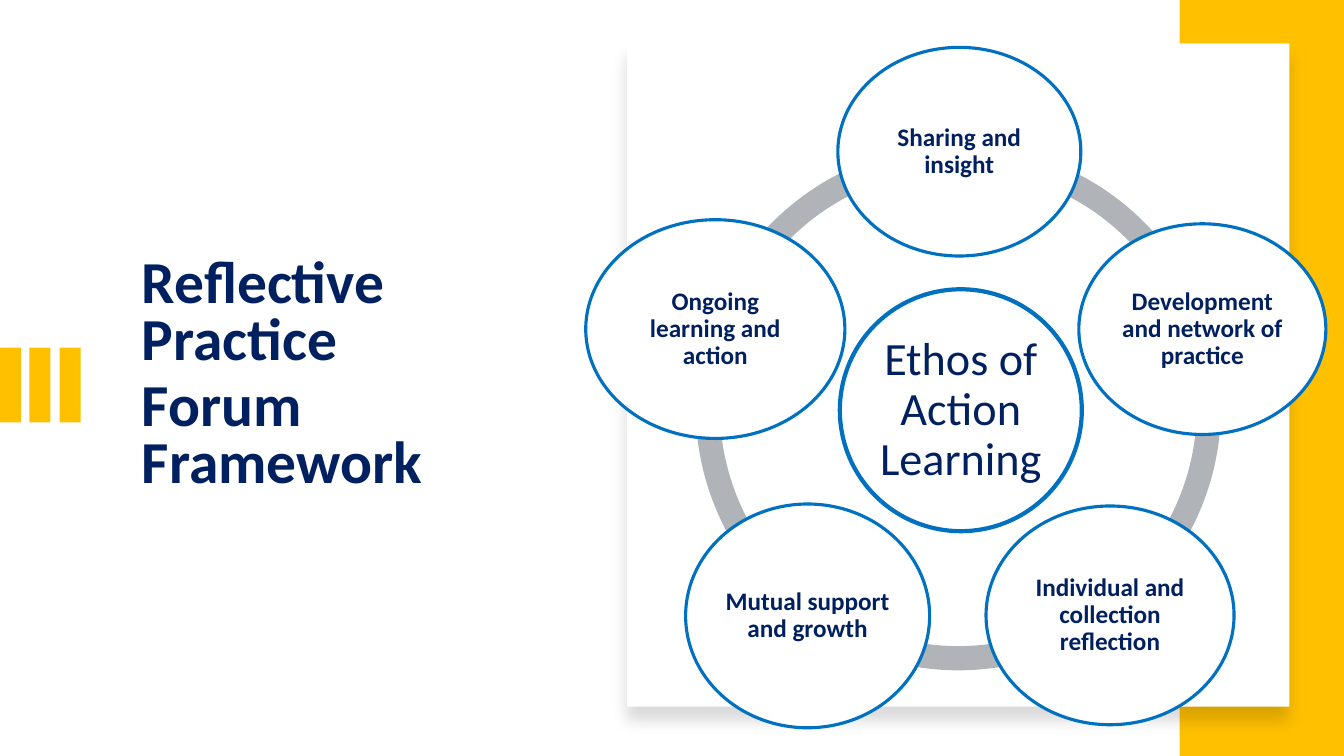
from dataclasses import dataclass
from itertools import pairwise

from lxml.etree import SubElement
from pptx import Presentation
from pptx.dml.color import RGBColor
from pptx.enum.shapes import MSO_SHAPE
from pptx.enum.text import MSO_ANCHOR, PP_ALIGN
from pptx.oxml.ns import qn
from pptx.shapes.autoshape import Shape
from pptx.slide import Slide
from pptx.text.text import _Paragraph as Paragraph
from pptx.util import Emu, Pt

PX = 9144  # 100 px to the inch
WHITE = RGBColor(0xFF, 0xFF, 0xFF)
BLACK = RGBColor(0x00, 0x00, 0x00)
NAVY = RGBColor(0x00, 0x20, 0x60)
BLUE = RGBColor(0x00, 0x70, 0xC0)
GOLD = RGBColor(0xFF, 0xC0, 0x00)
GREY = RGBColor(0xB0, 0xB4, 0xB9)


@dataclass(frozen=True)
class Box:
    left: int
    top: int
    width: int
    height: int

    def emu(self) -> tuple[Emu, ...]:
        return tuple(Emu(value * PX)
                     for value in (self.left, self.top, self.width, self.height))


@dataclass(frozen=True)
class Bubble:
    text: str
    box: Box
    size: float = 18
    bold: bool = True
    line_width: float = 2.25
    inset: int = 3


TITLE_BOX = Box(131, 251, 441, 261)
TITLE_LINES = ("Reflective Practice", "Forum Framework")
SIDE_PANEL = Box(1170, 0, 163, 750)
CARD = Box(622, 43, 657, 658)
RING = Box(690, 144, 521, 521)
RING_THICKNESS = 0.046
ARC_COUNT, FIRST_ANGLE, ARC_STEP = 5, 32.4, 43.2
ARC_OVERLAP = 0.3  # degrees, hides the seams between arcs

BUBBLES = (
    Bubble("Ethos of Action Learning", Box(833, 287, 240, 240), 33, False, 3, 1),
    Bubble("Sharing and insight", Box(831, 47, 241, 207)),
    Bubble("Development and network of practice", Box(1070, 222, 245, 209)),
    Bubble("Individual and collection reflection", Box(978, 502, 246, 217)),
    Bubble("Mutual support and growth", Box(680, 500, 242, 222)),
    Bubble("Ongoing learning and action", Box(581, 218, 257, 217)),
)


def add_filled_shape(slide: Slide, kind: MSO_SHAPE, box: Box, fill: RGBColor) -> Shape:
    shape = slide.shapes.add_shape(kind, *box.emu())
    shape.shadow.inherit = False
    shape.fill.solid()
    shape.fill.fore_color.rgb = fill
    shape.line.fill.background()
    return shape


def add_soft_shadow(shape: Shape) -> None:
    """Drop a faint shadow straight down."""
    effects = shape._element.spPr.find(qn("a:effectLst"))
    shadow = SubElement(effects, qn("a:outerShdw"), blurRad=str(Pt(11)),
                        dist=str(Pt(10)), dir="5400000", algn="t", rotWithShape="0")
    color = SubElement(shadow, qn("a:srgbClr"), val=str(BLACK))
    SubElement(color, qn("a:alpha"), val="15000")


def write_paragraph(paragraph: Paragraph, text: str, size: float, bold: bool,
                    layout: dict[str, object]) -> None:
    paragraph.text = text
    for name, value in layout.items():
        setattr(paragraph, name, value)
    font_values = {"name": "Calibri", "size": Pt(size), "bold": bold}
    for name, value in font_values.items():
        setattr(paragraph.runs[0].font, name, value)
    paragraph.runs[0].font.color.rgb = NAVY


def add_title(slide: Slide) -> None:
    frame = slide.shapes.add_textbox(*TITLE_BOX.emu()).text_frame
    frame.word_wrap = True
    layout = {"line_spacing": 0.8, "space_after": Pt(6)}
    for index, text in enumerate(TITLE_LINES):
        paragraph = frame.add_paragraph() if index else frame.paragraphs[0]
        write_paragraph(paragraph, text, 42.5, True, layout)


def add_ring(slide: Slide) -> None:
    """Close the ring with four equal arcs and one long arc over the top."""
    angles = [FIRST_ANGLE + step * ARC_STEP for step in range(ARC_COUNT)]
    for start, end in pairwise([*angles, FIRST_ANGLE]):
        arc = add_filled_shape(slide, MSO_SHAPE.BLOCK_ARC, RING, GREY)
        # An angle is kept in 60000ths of a degree, an adjustment in 100000ths.
        arc.adjustments[0] = start * 0.6
        arc.adjustments[1] = (end + ARC_OVERLAP) * 0.6
        arc.adjustments[2] = RING_THICKNESS


def add_bubble(slide: Slide, bubble: Bubble) -> None:
    shape = add_filled_shape(slide, MSO_SHAPE.OVAL, bubble.box, WHITE)
    shape.line.color.rgb = BLUE
    shape.line.width = Pt(bubble.line_width)
    frame = shape.text_frame
    frame.word_wrap = True
    frame.vertical_anchor = MSO_ANCHOR.MIDDLE
    for side in ("left", "top", "right", "bottom"):
        setattr(frame, f"margin_{side}", Emu(bubble.inset * PX))
    layout = {"alignment": PP_ALIGN.CENTER, "line_spacing": 0.9}
    write_paragraph(frame.paragraphs[0], bubble.text, bubble.size, bubble.bold, layout)


def main() -> None:
    presentation = Presentation()
    presentation.slide_width = Emu(1333 * PX)
    presentation.slide_height = Emu(750 * PX)
    slide = presentation.slides.add_slide(presentation.slide_layouts[6])

    add_title(slide)
    for index in range(3):
        bar = Box(index * 59 // 2, 345, 21, 74)
        add_filled_shape(slide, MSO_SHAPE.RECTANGLE, bar, GOLD)
    add_filled_shape(slide, MSO_SHAPE.RECTANGLE, SIDE_PANEL, GOLD)
    add_soft_shadow(add_filled_shape(slide, MSO_SHAPE.RECTANGLE, CARD, WHITE))
    add_ring(slide)
    for bubble in BUBBLES:
        add_bubble(slide, bubble)

    presentation.save("out.pptx")


if __name__ == "__main__":
    main()
